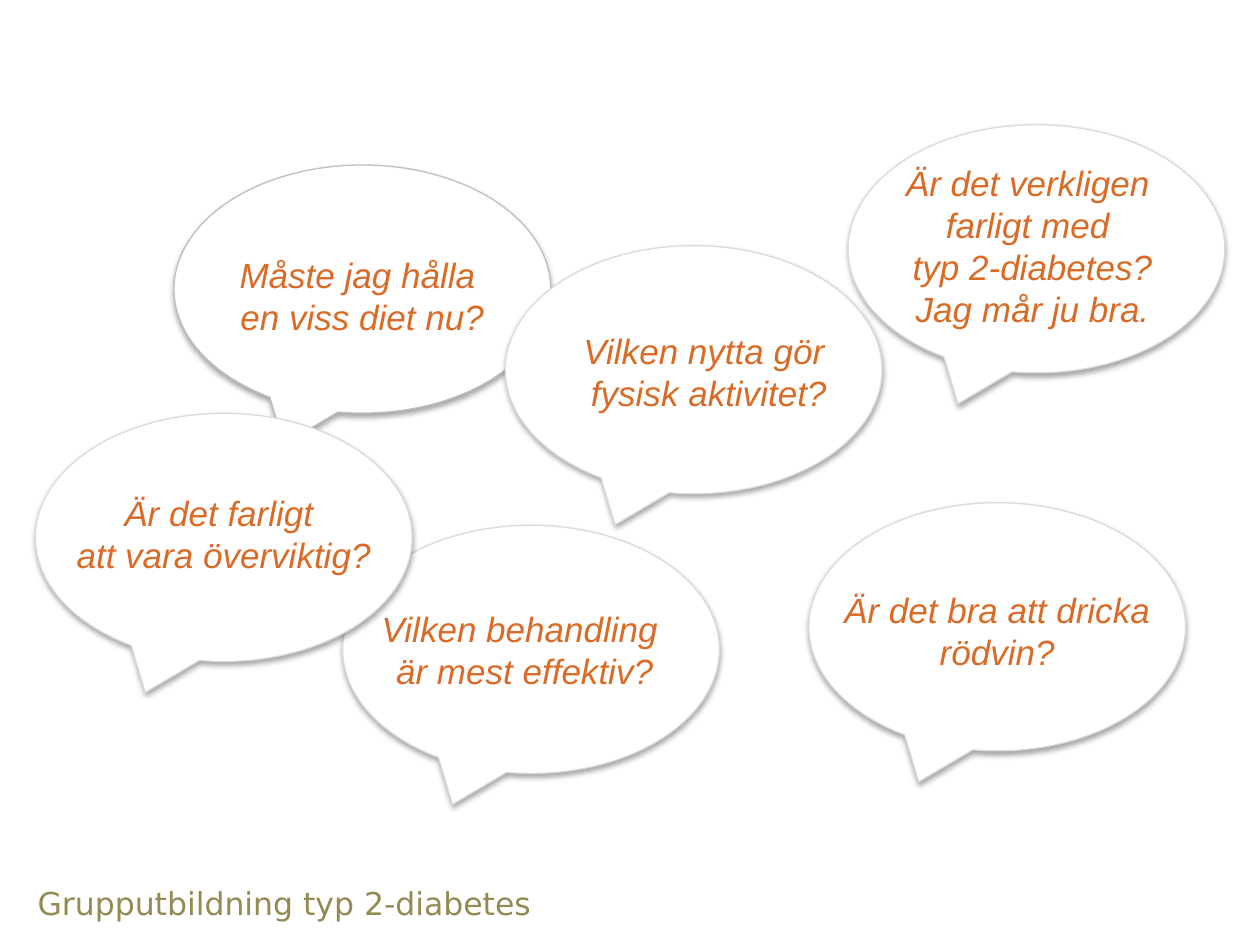
from dataclasses import dataclass

from lxml import etree
from pptx import Presentation
from pptx.dml.color import RGBColor
from pptx.enum import shapes, text
from pptx.oxml import ns
from pptx.util import Pt

WHITE = RGBColor(0xFF, 0xFF, 0xFF)
LIGHT_GREY = RGBColor(0xDB, 0xDB, 0xDB)
GREY = RGBColor(0xBF, 0xBF, 0xBF)
ORANGE = RGBColor(0xD9, 0x6B, 0x27)
OLIVE = RGBColor(0x94, 0x8A, 0x54)

BUBBLE_WIDTH = 215.3
BUBBLE_HEIGHT = 141.8


@dataclass
class Bubble:
    left: float
    top: float
    outline: RGBColor = LIGHT_GREY


@dataclass
class Caption:
    """Text box; each paragraph is a list of lines."""
    left: float
    top: float
    paragraphs: list[list[str]]
    width: float = BUBBLE_WIDTH
    height: float = 77.8
    font: str = "Arial"
    size: float = 20
    color: RGBColor = ORANGE
    italic: bool = True
    alignment: text.PP_ALIGN = text.PP_ALIGN.CENTER


BUBBLES = [
    Bubble(99.4, 94.3, GREY),
    Bubble(195.8, 300.2),
    Bubble(484.6, 71.3),
    Bubble(462.2, 287.3),
    Bubble(20.2, 236.2),
    Bubble(288.7, 140.4),
]

CAPTIONS = [
    Caption(99.4, 141.1, [["Måste jag hålla ", "en viss diet nu?"]]),
    Caption(297.4, 185, [["Vilken nytta gör ", "fysisk aktivitet?"]]),
    Caption(468, 88.6, [["Är det verkligen ", "farligt med "],
                        ["typ 2-diabetes?", "Jag mår ju bra."]],
            width=244.1, height=126),
    Caption(20.2, 277.2, [["Är det farligt ", "att vara överviktig?"]]),
    Caption(192.2, 343.4, [["Vilken behandling "], ["är mest effektiv?"]]),
    Caption(462.2, 332.6, [["Är det bra att dricka rödvin?"]], height=55.4),
    Caption(14.4, 501.8, [["Grupputbildning typ 2-diabetes"]],
            width=393.8, height=28.8, font="DejaVu Sans", size=18,
            color=OLIVE, italic=False, alignment=text.PP_ALIGN.LEFT),
]


def add_soft_shadow(shape) -> None:
    shape.shadow.inherit = False
    effects = shape._element.spPr.find(ns.qn("a:effectLst"))
    shadow = etree.SubElement(
        effects, ns.qn("a:outerShdw"), blurRad=str(Pt(3.1)), dist=str(Pt(1.8)),
        dir="5400000", rotWithShape="0")
    color = etree.SubElement(shadow, ns.qn("a:srgbClr"), val="000000")
    etree.SubElement(color, ns.qn("a:alpha"), val="35000")


def draw_bubble(slide, bubble: Bubble) -> None:
    shape = slide.shapes.add_shape(
        shapes.MSO_SHAPE.OVAL_CALLOUT, Pt(bubble.left), Pt(bubble.top),
        Pt(BUBBLE_WIDTH), Pt(BUBBLE_HEIGHT))
    shape.fill.solid()
    shape.fill.fore_color.rgb = WHITE
    shape.line.color.rgb = bubble.outline
    shape.line.width = Pt(0.75)
    add_soft_shadow(shape)


def draw_caption(slide, caption: Caption) -> None:
    box = slide.shapes.add_textbox(
        Pt(caption.left), Pt(caption.top), Pt(caption.width), Pt(caption.height))
    frame = box.text_frame
    frame.word_wrap = True
    for index, lines in enumerate(caption.paragraphs):
        paragraph = frame.add_paragraph() if index else frame.paragraphs[0]
        paragraph.alignment = caption.alignment
        for number, line in enumerate(lines):
            if number:
                paragraph.add_line_break()
            run = paragraph.add_run()
            run.text = line
            run.font.name = caption.font
            run.font.size = Pt(caption.size)
            run.font.italic = caption.italic
            run.font.color.rgb = caption.color


def main() -> None:
    presentation = Presentation()
    presentation.slide_width = Pt(720)
    presentation.slide_height = Pt(540)
    slide = presentation.slides.add_slide(presentation.slide_layouts[6])
    for bubble in BUBBLES:
        draw_bubble(slide, bubble)
    for caption in CAPTIONS:
        draw_caption(slide, caption)
    presentation.save("out.pptx")


if __name__ == "__main__":
    main()
